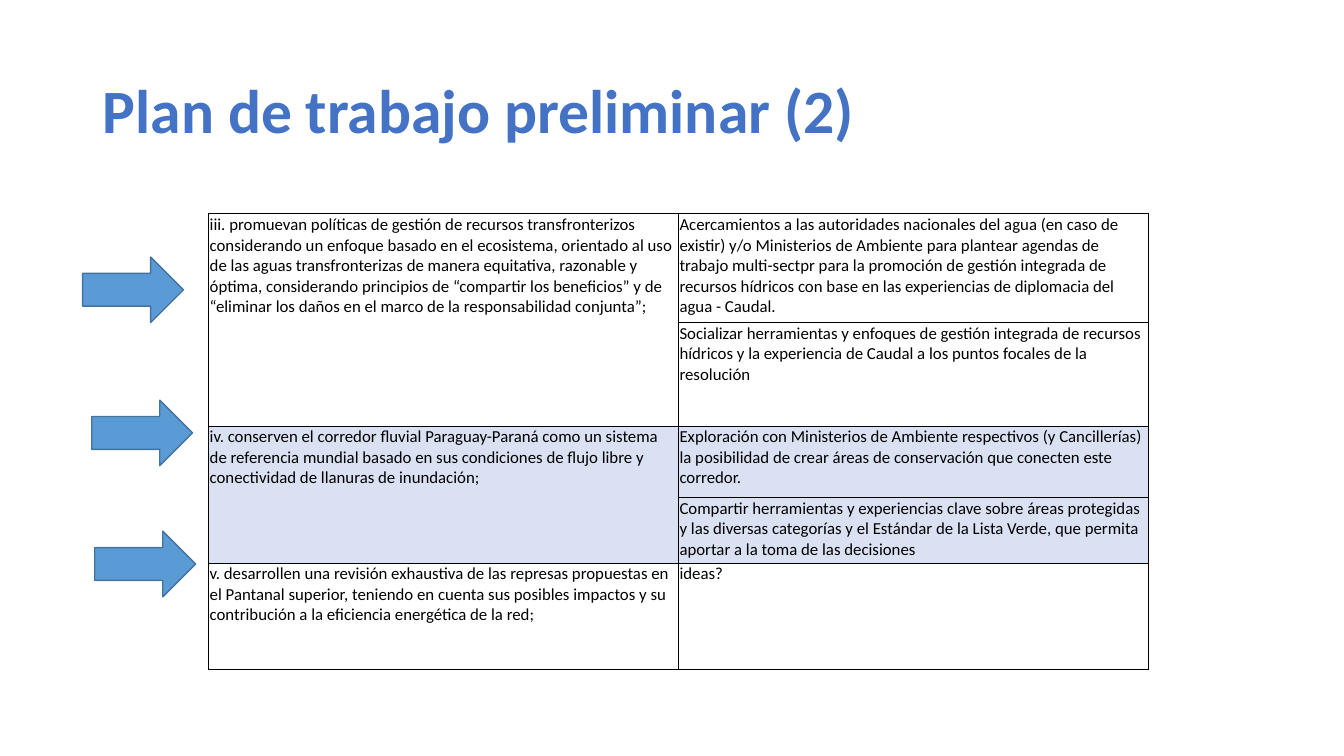
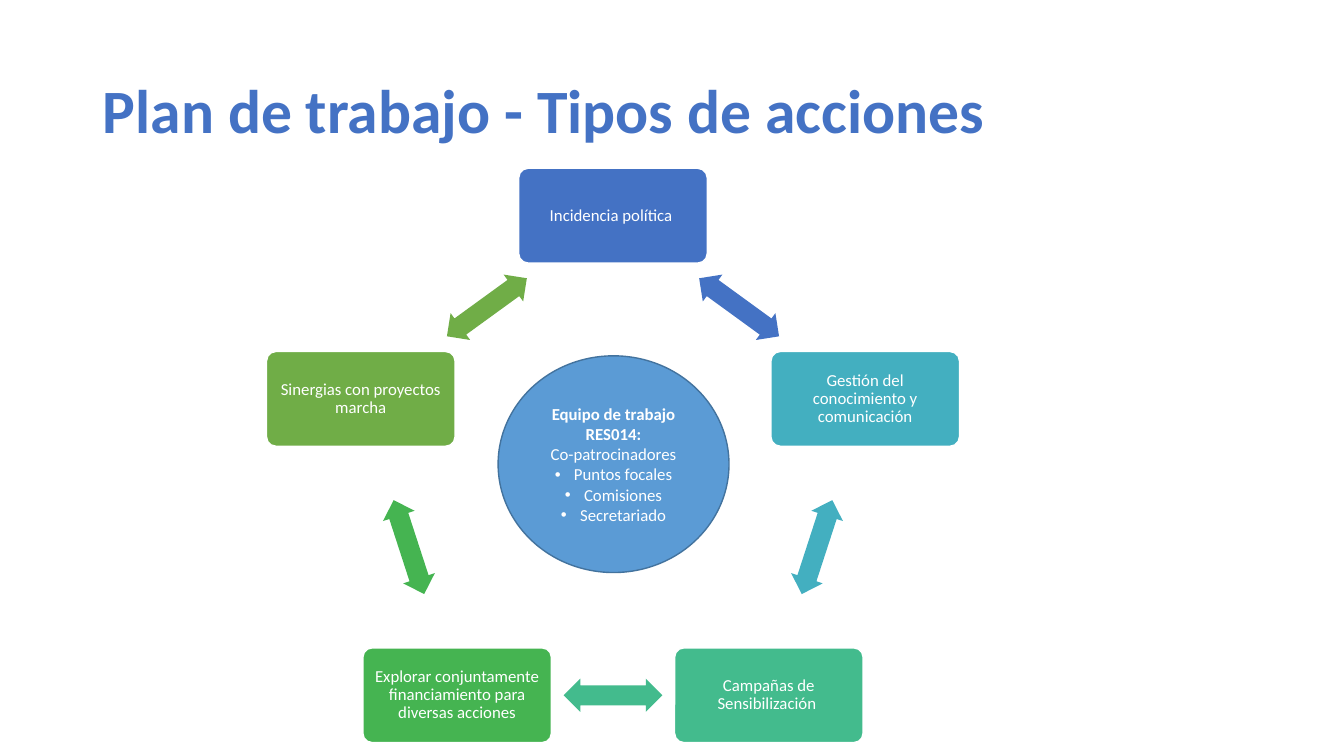
import math

from lxml import etree
from pptx import Presentation
from pptx.dml.color import RGBColor
from pptx.enum.shapes import MSO_SHAPE
from pptx.enum.text import MSO_ANCHOR, MSO_AUTO_SIZE, PP_ALIGN
from pptx.oxml.ns import qn
from pptx.util import Inches, Pt

RIGHT_ARROW = MSO_SHAPE.RIGHT_ARROW
DOUBLE_ARROW = MSO_SHAPE.LEFT_RIGHT_ARROW
ROUNDED = MSO_SHAPE.ROUNDED_RECTANGLE
ELLIPSE = MSO_SHAPE.OVAL
MIDDLE = MSO_ANCHOR.MIDDLE
LEFT = PP_ALIGN.LEFT
CENTER = PP_ALIGN.CENTER
NO_FIT = MSO_AUTO_SIZE.NONE

FONT = "Calibri"
TITLE_BLUE = "4472C4"
SHAPE_BLUE = "5B9BD5"
OUTLINE_BLUE = "43739E"
ROW_BLUE = "D9E1F2"
WHITE = "FFFFFF"
BLACK = "000000"

ARROW_PLACES = [(0.82, 2.55), (0.91, 3.97), (0.94, 5.27)]
ROW_HEIGHTS = [1.08, 0.62, 0.71, 0.65, 1.05]
PLAN = [
    (
        "iii. promuevan políticas de gestión de recursos transfronterizos considerando un enfoque "
        "basado en el ecosistema, orientado al uso de las aguas transfronterizas de manera equitativa, "
        "razonable y óptima, considerando principios de “compartir los beneficios” y de “eliminar los "
        "daños en el marco de la responsabilidad conjunta”;",
        [
            "Acercamientos a las autoridades nacionales del agua (en caso de existir) y/o Ministerios "
            "de Ambiente para plantear agendas de trabajo multi-sectpr para la promoción de gestión "
            "integrada de recursos hídricos con base en las experiencias de diplomacia del agua - Caudal.",
            "Socializar herramientas y enfoques de gestión integrada de recursos hídricos y la "
            "experiencia de Caudal a los puntos focales de la resolución",
        ],
        None,
    ),
    (
        "iv. conserven el corredor fluvial Paraguay-Paraná como un sistema de referencia mundial "
        "basado en sus condiciones de flujo libre y conectividad de llanuras de inundación;",
        [
            "Exploración con Ministerios de Ambiente respectivos (y Cancillerías) la posibilidad de "
            "crear áreas de conservación que conecten este corredor.",
            "Compartir herramientas y experiencias clave sobre áreas protegidas y las diversas "
            "categorías y el Estándar de la Lista Verde, que permita aportar a la toma de las decisiones",
        ],
        ROW_BLUE,
    ),
    (
        "v. desarrollen una revisión exhaustiva de las represas propuestas en el Pantanal superior, "
        "teniendo en cuenta sus posibles impactos y su contribución a la eficiencia energética de la red;",
        ["ideas?"],
        None,
    ),
]

ACTIONS = [
    ("Incidencia política ", "4472C4"),
    ("Gestión del conocimiento y comunicación", "43AFC0"),
    ("Campañas de Sensibilización ", "43BB8D"),
    ("Explorar conjuntamente financiamiento para diversas acciones", "45B451"),
    ("Sinergias con proyectos marcha", "70AD47"),
]
RING_X, RING_Y, RING_RADIUS = 6.08, 4.77, 2.63
TEAM = ["Puntos focales", "Comisiones", "Secretariado"]


def color(value):
    return RGBColor.from_string(value)


class SlideBuilder:
    def __init__(self, deck):
        self.deck = deck
        self.slide = None

    def new_slide(self, title):
        self.slide = self.deck.slides.add_slide(self.deck.slide_layouts[5])
        box = self.slide.shapes.title
        box.left, box.top = Inches(0.92), Inches(0.4)
        box.width, box.height = Inches(11.5), Inches(1.45)
        frame = box.text_frame
        frame.auto_size = NO_FIT
        frame.word_wrap = True
        frame.vertical_anchor = MIDDLE
        para = frame.paragraphs[0]
        para.alignment = LEFT
        para.line_spacing = 0.9
        self.span(para, title, TITLE_BLUE, size=44, bold=True)

    def span(self, para, text, tint, size=12, bold=False):
        run = para.add_run()
        run.text = text
        run.font.name = FONT
        run.font.size = Pt(size)
        run.font.bold = bold
        run.font.color.rgb = color(tint)

    def shape(self, kind, left, top, width, height, fill, line=None, adjustments=(), rotation=0):
        shape = self.slide.shapes.add_shape(
            kind, Inches(left), Inches(top), Inches(width), Inches(height))
        shape.shadow.inherit = False
        shape.fill.solid()
        shape.fill.fore_color.rgb = color(fill)
        if line:
            shape.line.color.rgb = color(line)
            shape.line.width = Pt(1)
        else:
            shape.line.fill.background()
        for index, value in enumerate(adjustments):
            shape.adjustments[index] = value
        shape.rotation = rotation
        frame = shape.text_frame
        frame.word_wrap = True
        frame.vertical_anchor = MIDDLE
        return shape

    def action_box(self, x, y, text, fill):
        width, height = 1.87, 0.94
        box = self.shape(ROUNDED, x - width / 2, y - height / 2, width, height, fill, WHITE, [0.1])
        frame = box.text_frame
        frame.margin_left = frame.margin_right = Inches(0.08)
        frame.margin_top = frame.margin_bottom = Inches(0.08)
        para = frame.paragraphs[0]
        para.alignment = CENTER
        para.line_spacing = 0.9
        self.span(para, text, WHITE)

    def double_arrow(self, x, y, rotation, fill):
        width, height = 0.98, 0.33
        self.shape(DOUBLE_ARROW, x - width / 2, y - height / 2, width, height, fill,
                   adjustments=[0.6, 0.5], rotation=rotation)

    def team_circle(self, heading, lead, members):
        circle = self.shape(ELLIPSE, 4.94, 3.53, 2.29, 2.15, SHAPE_BLUE, OUTLINE_BLUE)
        frame = circle.text_frame
        for index, text in enumerate([heading, lead, *members]):
            para = frame.add_paragraph() if index else frame.paragraphs[0]
            para.alignment = CENTER
            self.span(para, text, WHITE, bold=index == 0)
            if text in members:
                self.bullet(para)

    def bullet(self, para):
        properties = para._p.get_or_add_pPr()
        properties.set("marL", str(Inches(0.19)))
        properties.set("indent", str(-Inches(0.19)))
        etree.SubElement(properties, qn("a:buFont"), typeface="Arial")
        etree.SubElement(properties, qn("a:buChar"), char="•")

    def borders(self, cell):
        properties = cell._tc.get_or_add_tcPr()
        for side in ("a:lnL", "a:lnR", "a:lnT", "a:lnB"):
            edge = etree.SubElement(properties, qn(side), w=str(Pt(0.5)))
            fill = etree.SubElement(edge, qn("a:solidFill"))
            etree.SubElement(fill, qn("a:srgbClr"), val=BLACK)

    def cell(self, cell, text, fill):
        cell.margin_left = cell.margin_right = cell.margin_top = Inches(0.01)
        cell.margin_bottom = 0
        self.borders(cell)
        if fill:
            cell.fill.solid()
            cell.fill.fore_color.rgb = color(fill)
        else:
            cell.fill.background()
        if text:
            self.span(cell.text_frame.paragraphs[0], text, BLACK)

    def plan_table(self, groups, heights):
        table = self.slide.shapes.add_table(
            len(heights), 2, Inches(2.07), Inches(2.12), Inches(9.32), Inches(sum(heights))).table
        table.first_row = False
        table.horz_banding = False
        for row, height in zip(table.rows, heights):
            row.height = Inches(height)
        start = 0
        for goal, tasks, fill in groups:
            for offset, task in enumerate(tasks):
                self.cell(table.cell(start + offset, 0), "" if offset else goal, fill)
                self.cell(table.cell(start + offset, 1), task, fill)
            end = start + len(tasks)
            if len(tasks) > 1:
                table.cell(start, 0).merge(table.cell(end - 1, 0))
            start = end


def ring_point(index):
    angle = math.radians(72 * index)
    return RING_X + RING_RADIUS * math.sin(angle), RING_Y - RING_RADIUS * math.cos(angle)


def main():
    deck = Presentation()
    deck.slide_width, deck.slide_height = Inches(13.33), Inches(7.5)
    builder = SlideBuilder(deck)

    builder.new_slide("Plan de trabajo preliminar (2)")
    for left, top in ARROW_PLACES:
        builder.shape(RIGHT_ARROW, left, top, 1, 0.65, SHAPE_BLUE, OUTLINE_BLUE)
    builder.plan_table(PLAN, ROW_HEIGHTS)

    builder.new_slide("Plan de trabajo - Tipos de acciones")
    for index, (text, fill) in enumerate(ACTIONS):
        x, y = ring_point(index)
        next_x, next_y = ring_point(index + 1)
        builder.action_box(x, y, text, fill)
        builder.double_arrow((x + next_x) / 2, (y + next_y) / 2, 36 + 72 * index, fill)
    builder.team_circle("Equipo de trabajo RES014:", "Co-patrocinadores", TEAM)

    deck.save("out.pptx")


if __name__ == "__main__":
    main()
